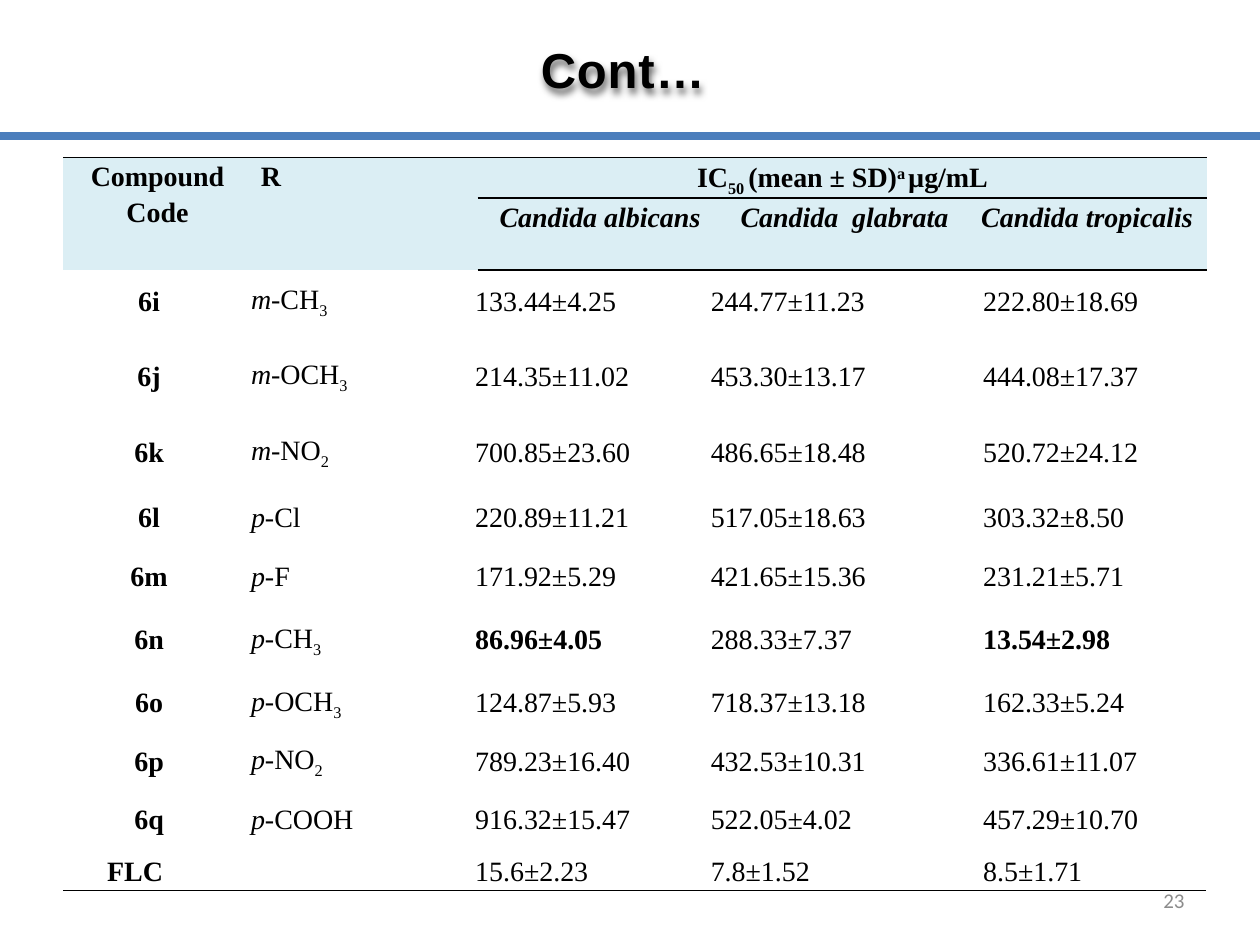
from lxml.etree import SubElement
from pptx import Presentation
from pptx.dml.color import RGBColor
from pptx.enum.shapes import MSO_CONNECTOR
from pptx.enum.text import MSO_ANCHOR, PP_ALIGN
from pptx.oxml import parse_xml
from pptx.oxml.ns import nsdecls, qn
from pptx.util import Cm, Pt

BLACK = RGBColor(0x00, 0x00, 0x00)
RULE_BLUE = RGBColor(0x4B, 0x7E, 0xBC)
HEADER_FILL = RGBColor(0xDB, 0xEE, 0xF4)
PAGE_GREY = RGBColor(0x8C, 0x8C, 0x8C)
PLAIN_STYLE = "{2D5ABB26-0587-4C30-8999-92F81FD0307C}"

COMPOUNDS = [
    ("6i ", "m", "-CH", "3", "133.44±4.25", "244.77±11.23", "222.80±18.69"),
    ("6j ", "m", "-OCH", "3", "214.35±11.02", "453.30±13.17", "444.08±17.37"),
    ("6k ", "m", "-NO", "2", "700.85±23.60", "486.65±18.48", "520.72±24.12"),
    ("6l ", "p", "-Cl", "", "220.89±11.21", "517.05±18.63", "303.32±8.50"),
    ("6m ", "p", "-F", "", "171.92±5.29", "421.65±15.36", "231.21±5.71"),
    ("6n ", "p", "-CH", "3", "86.96±4.05", "288.33±7.37", "13.54±2.98"),
    ("6o ", "p", "-OCH", "3", "124.87±5.93", "718.37±13.18", "162.33±5.24"),
    ("6p ", "p", "-NO", "2", "789.23±16.40", "432.53±10.31", "336.61±11.07"),
    ("6q ", "p", "-COOH", "", "916.32±15.47", "522.05±4.02", "457.29±10.70"),
]
FLUCONAZOLE = ("15.6±2.23", "7.8±1.52", "8.5±1.71")
BEST_VALUES = {"86.96±4.05", "13.54±2.98"}
SPECIES = ("Candida albicans", "Candida  glabrata", "Candida tropicalis")


def style_font(font, name, size, color, bold=False, italic=False):
    """Set the face, size, colour and weight of a font."""
    font.name, font.size = name, Pt(size)
    font.color.rgb = color
    font.bold, font.italic = bold, italic


def add_title(page, text):
    """Fill the title placeholder with spaced, softly shadowed text."""
    title = page.shapes.title
    title.left, title.top, title.width, title.height = Cm(0), Cm(0.66), Cm(25.4), Cm(1.45)
    title.text_frame.vertical_anchor = MSO_ANCHOR.MIDDLE
    para = title.text_frame.paragraphs[0]
    para.alignment = PP_ALIGN.CENTER
    span = para.add_run()
    span.text = text
    style_font(span.font, "Arial", 28, BLACK, bold=True)
    properties = span.font._element
    properties.set("spc", "50")
    properties.insert(0, parse_xml(
        f'<a:ln {nsdecls("a")} w="13462"><a:solidFill><a:srgbClr val="101A26">'
        '<a:alpha val="6000"/></a:srgbClr></a:solidFill></a:ln>'))
    title._element.spPr.append(parse_xml(
        f'<a:effectLst {nsdecls("a")}><a:outerShdw blurRad="50800" dist="38100" '
        'dir="4200000"><a:srgbClr val="000000"><a:alpha val="60000"/></a:srgbClr>'
        '</a:outerShdw></a:effectLst>'))


def add_rule(page):
    """Draw the full-width rule below the title."""
    rule = page.shapes.add_connector(
        MSO_CONNECTOR.STRAIGHT, Cm(0), Cm(2.74), Cm(25.4), Cm(2.74))
    rule.line.color.rgb = RULE_BLUE
    rule.line.width = Pt(4.5)
    SubElement(rule._element.spPr, qn("a:effectLst"))


def add_plain_table(page, top, widths, heights):
    """Add an unstyled table with the given column widths and row heights."""
    frame = page.shapes.add_table(
        len(heights), len(widths), Cm(1.27), Cm(top), Cm(sum(widths)), Cm(sum(heights)))
    table = frame.table
    table.first_row = table.horz_banding = False
    table._tbl.tblPr.find(qn("a:tableStyleId")).text = PLAIN_STYLE
    for column, width in zip(table.columns, widths):
        column.width = Cm(width)
    for row, height in zip(table.rows, heights):
        row.height = Cm(height)
    return table


def style_cells(table, anchor, fill=None):
    """Give every cell the same margins, anchor and fill."""
    for cell in table.iter_cells():
        cell.margin_left = cell.margin_right = Cm(0.18)
        cell.margin_top = cell.margin_bottom = Cm(0)
        cell.vertical_anchor = anchor
        if fill is None:
            cell.fill.background()
        else:
            cell.fill.solid()
            cell.fill.fore_color.rgb = fill


def add_border(cells, side):
    """Draw a thin black line on one side (lnT or lnB) of each cell."""
    for cell in cells:
        cell._tc.get_or_add_tcPr().insert(0, parse_xml(
            f'<a:{side} {nsdecls("a")} w="12700"><a:solidFill><a:srgbClr val="000000"/>'
            f'</a:solidFill></a:{side}>'))


def write_cell(cell, *spans, align=PP_ALIGN.LEFT, bold=False, italic=False):
    """Write (text, baseline, italic) spans or plain strings into a cell."""
    para = cell.text_frame.paragraphs[0]
    para.alignment = align
    para.line_spacing = 1.15
    para.space_after = Pt(10)
    style_font(para.font, "Times New Roman", 16, BLACK, bold, italic)
    for part in spans:
        text, baseline, slanted = (part, 0, italic) if isinstance(part, str) else part
        span = para.add_run()
        span.text = text
        style_font(span.font, "Times New Roman", 16, BLACK, bold, slanted)
        if baseline:
            span.font._element.set("baseline", str(baseline * 1000))
    return para


def add_header_table(page):
    """Build the shaded two-row heading of the results."""
    table = add_plain_table(page, 3.17, (3.81, 4.55, 4.93, 4.93, 4.85), (0.71, 1.45))
    style_cells(table, MSO_ANCHOR.TOP, HEADER_FILL)
    top, bottom = ([table.cell(row, column) for column in range(5)] for row in range(2))
    add_border(top[2:] + bottom, "lnB")
    add_border(top, "lnT")
    top[0].merge(bottom[0])
    top[1].merge(bottom[1])
    top[2].merge(top[4])
    write_cell(top[0], "Compound Code", align=PP_ALIGN.CENTER, bold=True)
    write_cell(top[1], "R", bold=True)
    heading = write_cell(top[2], "IC", ("50 ", -25, False), "(mean ± SD)", ("a", 30, False),
                         (" ", 30, False), "µg/mL", align=PP_ALIGN.CENTER, bold=True)
    heading.runs[4].font.size = Pt(12)
    for cell, species in zip(bottom[2:], SPECIES):
        write_cell(cell, species, align=PP_ALIGN.CENTER, bold=True, italic=True)


def add_results_table(page):
    """Build the table of compounds and their measured values."""
    heights = (1.52, 1.52, 1.52, 1.12, 1.27, 1.27, 1.27, 1.07, 1.27, 0.84)
    table = add_plain_table(page, 5.28, (3.61, 4.52, 4.75, 5.49, 4.67), heights)
    style_cells(table, MSO_ANCHOR.MIDDLE)
    last = len(COMPOUNDS)
    add_border([table.cell(0, column) for column in range(5)], "lnT")
    add_border([table.cell(last, column) for column in range(5)], "lnB")
    for row, (code, position, group, count, *values) in enumerate(COMPOUNDS):
        write_cell(table.cell(row, 0), code, align=PP_ALIGN.CENTER, bold=True)
        substituent = [(position, 0, True), group]
        if count:
            substituent.append((count, -25, False))
        write_cell(table.cell(row, 1), *substituent)
        write_values(table, row, values)
    table.cell(last, 0).merge(table.cell(last, 1))
    reference = write_cell(table.cell(last, 0), "FLC", bold=True)
    reference._p.get_or_add_pPr().set("marL", str(Cm(0.71)))
    write_values(table, last, FLUCONAZOLE)


def write_values(table, row, values):
    """Write one row of measurements, with the best ones in bold."""
    for column, value in enumerate(values, start=2):
        write_cell(table.cell(row, column), value, bold=value in BEST_VALUES)


def add_page_number(page, number):
    """Put the page number at the lower right."""
    box = page.shapes.add_textbox(Cm(18.2), Cm(17.65), Cm(5.93), Cm(1.01))
    box.text_frame.word_wrap = True
    box.text_frame.vertical_anchor = MSO_ANCHOR.MIDDLE
    para = box.text_frame.paragraphs[0]
    para.text = number
    para.alignment = PP_ALIGN.RIGHT
    style_font(para.font, "Calibri", 12, PAGE_GREY)


def main():
    """Build and save the slide."""
    deck = Presentation()
    deck.slide_width, deck.slide_height = Cm(25.4), Cm(19.05)
    page = deck.slides.add_slide(deck.slide_layouts[5])
    add_rule(page)
    add_title(page, "Cont… ")
    add_results_table(page)
    add_header_table(page)
    add_page_number(page, "23")
    deck.save("out.pptx")


if __name__ == "__main__":
    main()
